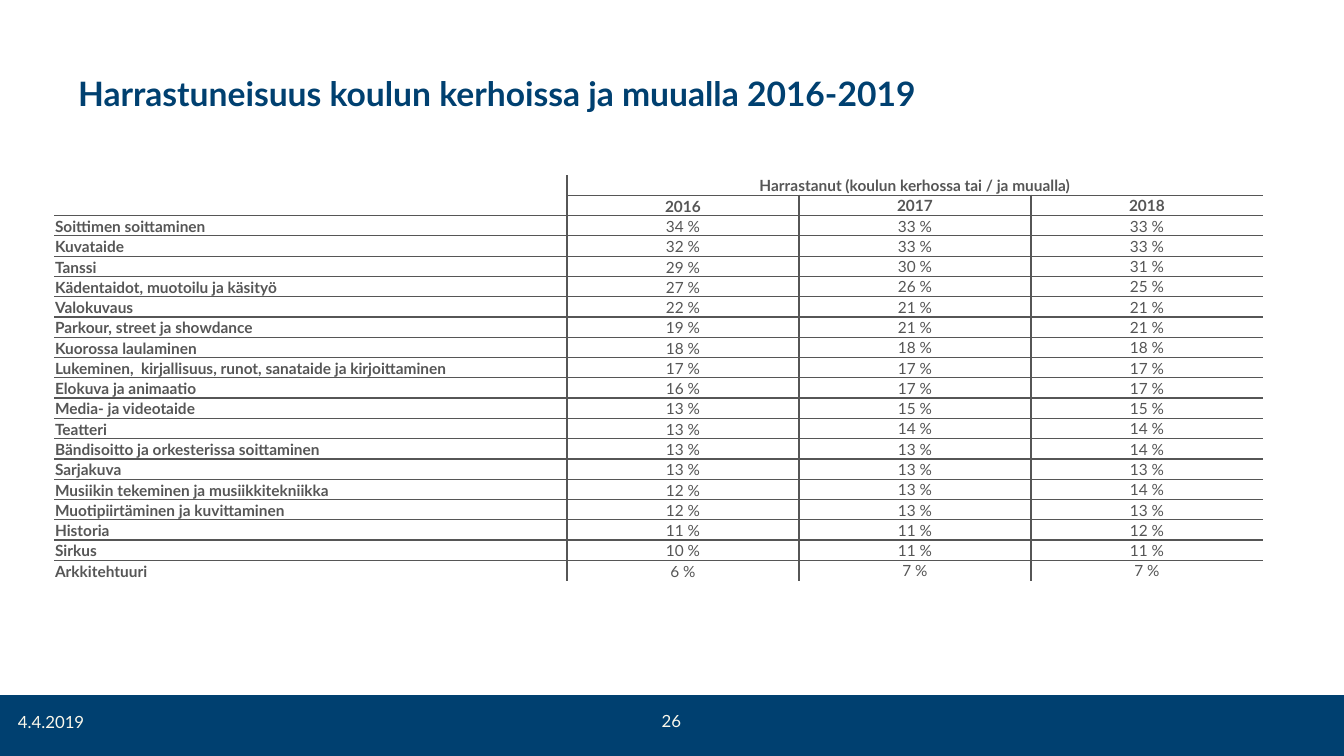
"""Build the slide on pupils' hobbies in school clubs and elsewhere, 2016-2019."""
from dataclasses import dataclass

from lxml.etree import SubElement
from pptx import Presentation
from pptx.dml.color import RGBColor
from pptx.enum.shapes import MSO_SHAPE as Shape
from pptx.enum.text import MSO_ANCHOR as Anchor, PP_ALIGN as Align
from pptx.oxml.ns import qn
from pptx.util import Emu, Pt

TITLE = "Harrastuneisuus koulun kerhoissa ja muualla 2016-2019"
GROUP = "Harrastanut (koulun kerhossa tai / ja muualla)"
YEARS = ("2016", "2017", "2018")
HOBBIES = [
    ("Soittimen soittaminen", 34, 33, 33),
    ("Kuvataide", 32, 33, 33),
    ("Tanssi", 29, 30, 31),
    ("Kädentaidot, muotoilu ja käsityö", 27, 26, 25),
    ("Valokuvaus", 22, 21, 21),
    ("Parkour, street ja showdance", 19, 21, 21),
    ("Kuorossa laulaminen", 18, 18, 18),
    ("Lukeminen,  kirjallisuus, runot, sanataide ja kirjoittaminen", 17, 17, 17),
    ("Elokuva ja animaatio", 16, 17, 17),
    ("Media- ja videotaide", 13, 15, 15),
    ("Teatteri", 13, 14, 14),
    ("Bändisoitto ja orkesterissa soittaminen", 13, 13, 14),
    ("Sarjakuva", 13, 13, 13),
    ("Musiikin tekeminen ja musiikkitekniikka", 12, 13, 14),
    ("Muotipiirtäminen ja kuvittaminen", 12, 13, 13),
    ("Historia", 11, 11, 12),
    ("Sirkus", 10, 11, 11),
    ("Arkkitehtuuri", 6, 7, 7),
]
FOOTER = [
    ("26", (515, 706, 313, 40), Align.CENTER),
    ("4.4.2019", (8, 707, 313, 40), Align.LEFT),
]
PAGE_SIZE = (1344, 756)
TITLE_BOX = (68, 30, 941, 126)
BAND_BOX = (0, 695, 1344, 61)
TABLE_BOX = (54, 175, 1209, 406)
COLUMN_WIDTHS = (513, 232, 232, 232)
HEADER_ROWS = 2


@dataclass(frozen=True)
class Theme:
    """Colours, font and type sizes."""
    navy: str = "004070"
    grey: str = "565656"
    cream: str = "FBF8EB"
    font: str = "Lato"
    title: int = 24
    table: int = 11
    footer: int = 12
    rule: int = 1


THEME = Theme()


def px(length):
    """Turn pixels into EMU."""
    return Emu(round(length * 914400 / 100.8))


def write(frame, text, size, colour, align=Align.LEFT, bold=False):
    """Put one formatted paragraph into a text frame."""
    frame.word_wrap = True
    para = frame.paragraphs[0]
    para.text = text
    para.alignment = align
    font = para.font
    font.name, font.size, font.bold = THEME.font, Pt(size), bold
    font.color.rgb = RGBColor.from_string(colour)


def is_ruled(row, column, side, last_row, last_column):
    """Tell whether a cell side carries a rule: inner edges only."""
    if side == "L":
        return column == 1 or (column > 1 and row > 0)
    if side == "R":
        return column == 0 or (column < last_column and row > 0)
    edge = row if side == "T" else row + 1
    return 0 < edge <= last_row and not (edge == 1 and column == 0)


def add_rules(cell, sides):
    """Draw the given sides of a cell and clear the others."""
    properties = cell._tc.get_or_add_tcPr()
    for side, ruled in sides.items():
        line = SubElement(properties, qn(f"a:ln{side}"), w=str(Pt(THEME.rule)))
        if ruled:
            fill = SubElement(line, qn("a:solidFill"))
            SubElement(fill, qn("a:srgbClr"), val=THEME.grey)
        else:
            SubElement(line, qn("a:noFill"))


def add_hobby_table(page):
    """Add the table of shares by hobby and year."""
    rows = [("", GROUP, "", ""), ("", *YEARS)]
    rows += [(name, *(f"{share} %" for share in shares)) for name, *shares in HOBBIES]
    last_row, last_column = len(rows) - 1, len(COLUMN_WIDTHS) - 1
    table = page.shapes.add_table(len(rows), len(COLUMN_WIDTHS), *map(px, TABLE_BOX)).table
    table.first_row = table.horz_banding = False
    for column, width in zip(table.columns, COLUMN_WIDTHS):
        column.width = px(width)
    for row in table.rows:
        row.height = px(TABLE_BOX[3] / len(rows))
    table.cell(0, 1).merge(table.cell(0, last_column))
    for r, texts in enumerate(rows):
        for c, text in enumerate(texts):
            cell = table.cell(r, c)
            cell.margin_left = cell.margin_right = cell.margin_top = px(1)
            cell.margin_bottom = 0
            cell.vertical_anchor = Anchor.BOTTOM if c < 2 else Anchor.MIDDLE
            write(cell.text_frame, text, THEME.table, THEME.grey,
                  Align.CENTER if c else Align.LEFT, c == 0 or r < HEADER_ROWS)
            if not text:
                para = cell.text_frame.paragraphs[0]
                SubElement(para._p, qn("a:endParaRPr"), sz=str(THEME.table * 100))
            add_rules(cell, {side: is_ruled(r, c, side, last_row, last_column)
                             for side in "LRTB"})
            cell.fill.background()


def main():
    """Build and save the deck."""
    deck = Presentation()
    deck.slide_width, deck.slide_height = map(px, PAGE_SIZE)
    page = deck.slides.add_slide(deck.slide_layouts[5])

    title = page.shapes.title
    title.left, title.top, title.width, title.height = map(px, TITLE_BOX)
    title.text_frame.vertical_anchor = Anchor.MIDDLE
    write(title.text_frame, TITLE, THEME.title, THEME.navy, bold=True)

    band = page.shapes.add_shape(Shape.RECTANGLE, *map(px, BAND_BOX))
    band.shadow.inherit = False
    band.fill.solid()
    band.fill.fore_color.rgb = RGBColor.from_string(THEME.navy)
    band.line.fill.background()

    add_hobby_table(page)
    for text, place, align in FOOTER:
        box = page.shapes.add_textbox(*map(px, place))
        write(box.text_frame, text, THEME.footer, THEME.cream, align)
    deck.save("out.pptx")


if __name__ == "__main__":
    main()
